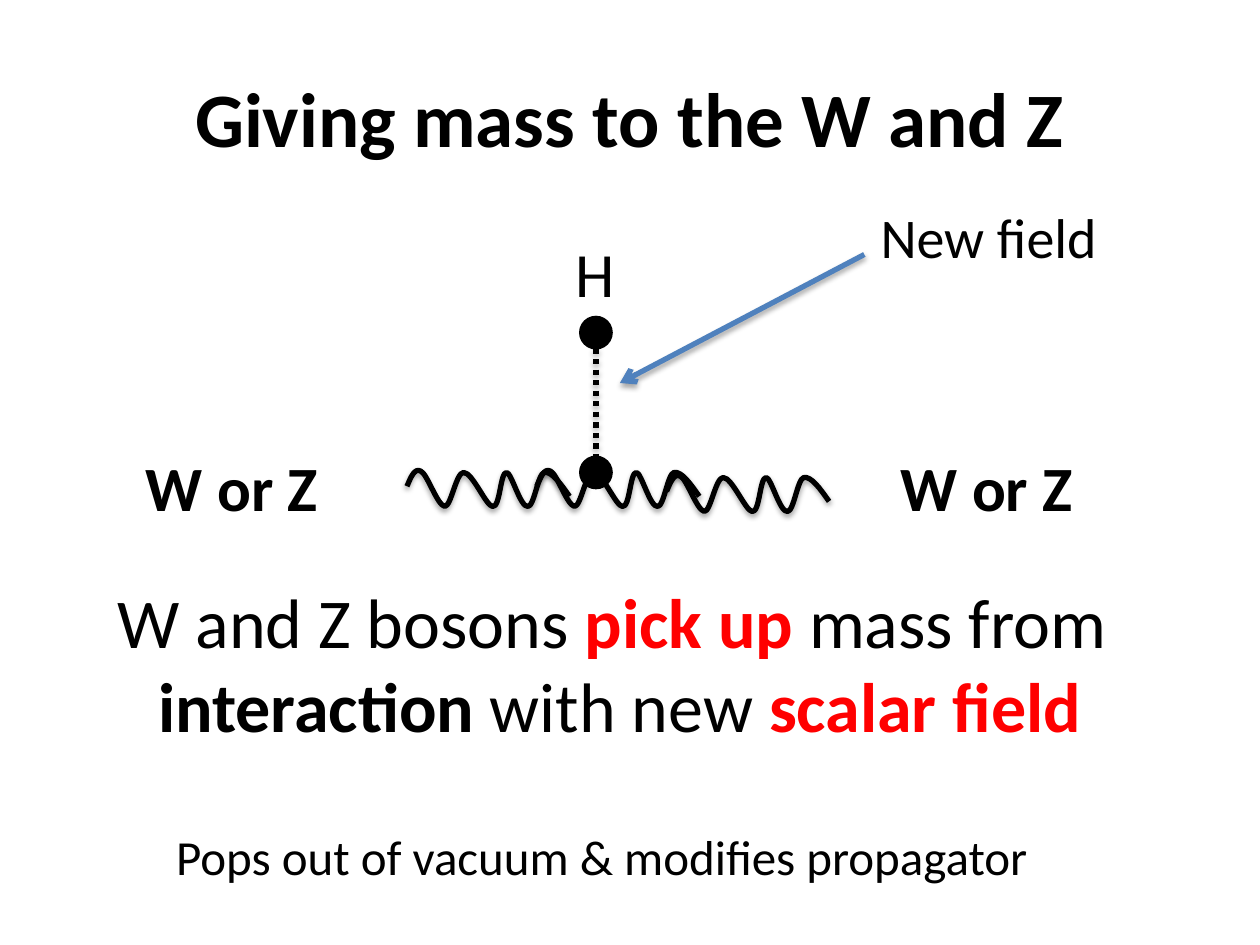
import math

from lxml import etree
from pptx import Presentation, util as u
from pptx.dml.color import RGBColor
from pptx.enum import dml, shapes, text
from pptx.oxml import ns

BLACK = RGBColor(0x00, 0x00, 0x00)
RED = RGBColor(0xFF, 0x00, 0x00)
BLUE = RGBColor(0x4F, 0x81, 0xBD)
LEFT, MID = text.PP_ALIGN.LEFT, text.PP_ALIGN.CENTER
BOLD = {"bold": True}
HOT = {"bold": True, "color": RED}

# box, size, alignment, paragraphs of (words, format) runs
TITLE = ((0.5, 0.3, 9, 1.25), 44, MID, [[("Giving mass to the W and Z", BOLD)]])
LABELS = [
    ((4.47, 1.81, 0.52, 0.71), 36, LEFT, [[("H", {})]]),
    ((1.06, 3.51, 1.58, 0.71), 36, LEFT, [[("W or Z", BOLD)]]),
    ((7.05, 3.51, 1.58, 0.71), 36, LEFT, [[("W or Z", BOLD)]]),
]
NOTES = [
    ((0.79, 4.54, 8.26, 1.45), 40, MID, [
        [("W and Z bosons ", {}), ("pick up ", HOT), ("mass from ", {})],
        [("interaction", BOLD), (" with new ", {}), ("scalar field", HOT)],
    ]),
    ((1.3, 6.51, 7.04, 0.57), 28, LEFT,
     [[("Pops out of vacuum & modifies propagator", {})]]),
]
FIELD = ((6.89, 1.56, 1.94, 0.64), 32, LEFT, [[("New field", {})]])

# one boson wave on the slide: start, then cubic curves (two controls and an end)
START = (3.23, 3.86)
CURVES = [
    ((3.26, 3.79), (3.29, 3.71), (3.34, 3.74)),
    ((3.39, 3.76), (3.47, 4.01), (3.53, 4.02)),
    ((3.58, 4.02), (3.62, 3.75), (3.68, 3.75)),
    ((3.75, 3.75), (3.86, 4.02), (3.91, 4.02)),
    ((3.97, 4.03), (3.97, 3.75), (4.02, 3.75)),
    ((4.06, 3.75), (4.13, 4.03), (4.19, 4.02)),
    ((4.24, 4.02), (4.27, 3.76), (4.32, 3.75)),
    ((4.38, 3.74), (4.45, 3.84), (4.52, 3.94)),
]
WAVE_BOX = (3.31, 3.53, 1.16, 0.67)
TURN = 30.5
SHIFTS = [(0, 0), (1.03, 0), (2.06, 0.04)]
DOT, DOT_X, LOW, HIGH = 0.24, 4.61, 3.63, 2.52


def inches(vals):
    return [u.Inches(v) for v in vals]


def add_text(slide, box, size, align, paras, title=False):
    frame = slide.shapes.add_textbox(*inches(box)).text_frame
    frame.word_wrap = title
    if title:
        frame.vertical_anchor = text.MSO_ANCHOR.MIDDLE
    else:
        frame.auto_size = text.MSO_AUTO_SIZE.SHAPE_TO_FIT_TEXT
    for i, runs in enumerate(paras):
        para = frame.add_paragraph() if i else frame.paragraphs[0]
        para.alignment = align
        for words, style in runs:
            run = para.add_run()
            run.text = words
            look = {"name": "Calibri", "size": u.Pt(size), "bold": False, **style}
            run.font.color.rgb = look.pop("color", BLACK)
            for key, val in look.items():
                setattr(run.font, key, val)


def ink(shape, color):
    """Give a 3 pt line and a soft shadow straight below it."""
    shape.line.color.rgb = color
    shape.line.width = u.Pt(3)
    fx = etree.SubElement(shape._element.spPr, ns.qn("a:effectLst"))
    shade = etree.SubElement(fx, ns.qn("a:outerShdw"), blurRad="40000",
                             dist="23000", dir="5400000", rotWithShape="0")
    tone = etree.SubElement(shade, ns.qn("a:srgbClr"), val=str(BLACK))
    etree.SubElement(tone, ns.qn("a:alpha"), val="35000")


def add_line(slide, ends, color):
    line = slide.shapes.add_connector(shapes.MSO_CONNECTOR.STRAIGHT, *inches(ends))
    ink(line, color)
    return line


def add_dot(slide, top):
    dot = slide.shapes.add_shape(shapes.MSO_SHAPE.OVAL,
                                 *inches((DOT_X, top, DOT, DOT)))
    dot.shadow.inherit = False
    dot.fill.solid()
    dot.fill.fore_color.rgb = dot.line.color.rgb = BLACK
    dot.line.width = u.Pt(2)


def unturn(point):
    """Map a slide point into the wave's box as it lies before its turn."""
    left, top, wide, high = WAVE_BOX
    x, y = point[0] - left - wide / 2, point[1] - top - high / 2
    cos, sin = math.cos(math.radians(TURN)), math.sin(math.radians(TURN))
    return inches((x * cos + y * sin + wide / 2, y * cos - x * sin + high / 2))


def add_wave(slide, dx, dy):
    left, top, wide, high = WAVE_BOX
    left, top = left + dx, top + dy
    pen = slide.shapes.build_freeform(*inches((left, top)))
    pen.add_line_segments([inches((left + wide, top + high))], close=False)
    wave = pen.convert_to_shape()
    wave.rotation = TURN
    wave.fill.background()
    ink(wave, BLACK)
    route = next(wave._element.iter(ns.qn("a:path")))
    for old in list(route):
        route.remove(old)
    for tag, pts in [("a:moveTo", [START])] + [("a:cubicBezTo", c) for c in CURVES]:
        step = etree.SubElement(route, ns.qn(tag))
        for x, y in map(unturn, pts):
            etree.SubElement(step, ns.qn("a:pt"), x=str(int(x)), y=str(int(y)))


def main():
    deck = Presentation()
    deck.slide_width, deck.slide_height = inches((10, 7.5))
    slide = deck.slides.add_slide(deck.slide_layouts[6])

    add_text(slide, *TITLE, title=True)
    stem = add_line(slide, (4.73, 2.6, 4.73, 3.79), BLACK)
    stem.line.dash_style = dml.MSO_LINE.ROUND_DOT
    for label in LABELS:
        add_text(slide, *label)
    add_dot(slide, LOW)
    for shift in SHIFTS:
        add_wave(slide, *shift)
    add_dot(slide, HIGH)
    for note in NOTES:
        add_text(slide, *note)
    arrow = add_line(slide, (6.86, 2.02, 4.92, 3.04), BLUE)
    etree.SubElement(arrow.line._get_or_add_ln(), ns.qn("a:tailEnd"), type="arrow")
    add_text(slide, *FIELD)
    deck.save("out.pptx")


if __name__ == "__main__":
    main()
